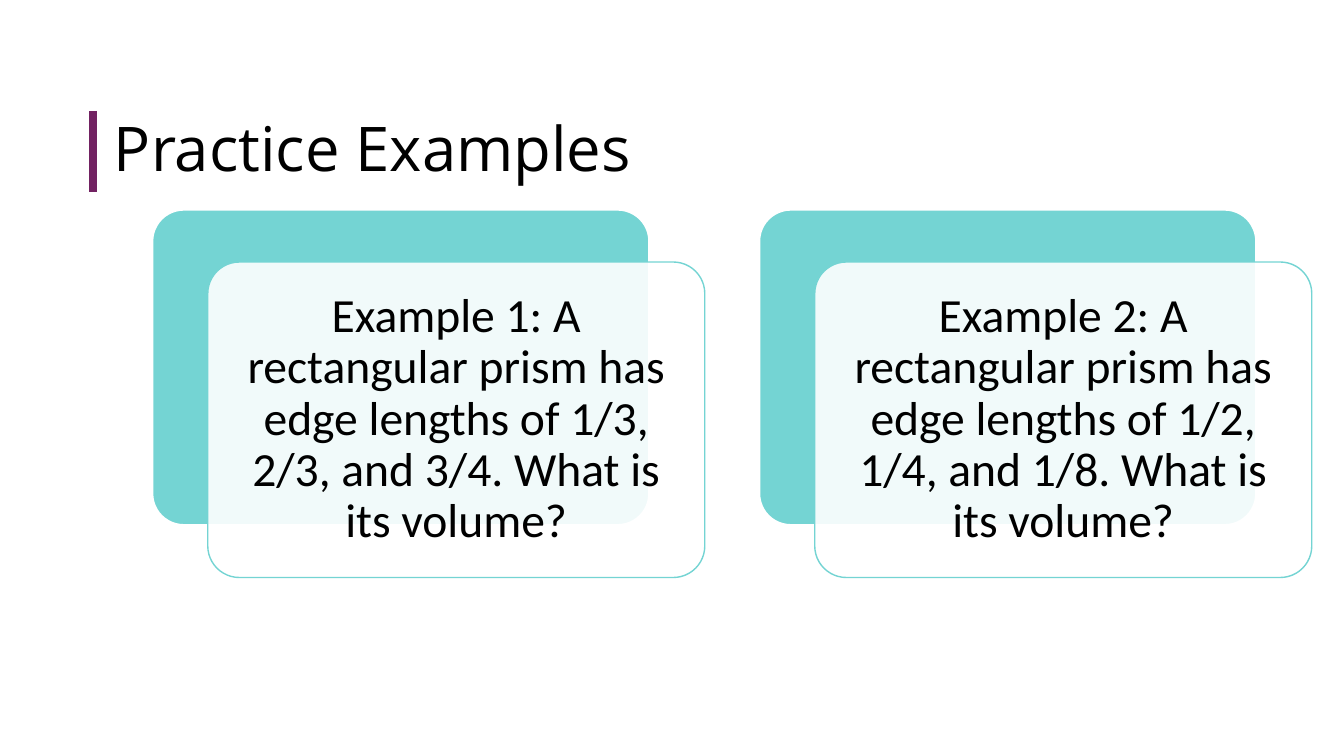
"""Build the Practice Examples slide with two layered example cards."""
from dataclasses import dataclass

from lxml.etree import SubElement
from pptx import Presentation
from pptx.dml.color import RGBColor
from pptx.enum.shapes import MSO_CONNECTOR as Connector, MSO_SHAPE as Preset
from pptx.enum.text import MSO_ANCHOR as Anchor, PP_ALIGN as Align
from pptx.oxml.ns import qn
from pptx.shapes.autoshape import Shape
from pptx.slide import Slide
from pptx.text.text import TextFrame
from pptx.util import Inches, Length, Pt

SLIDE_WIDTH, SLIDE_HEIGHT = Inches(13.33), Inches(7.5)


@dataclass(frozen=True)
class Theme:
    """Colours, fonts and type sizes of the slide."""
    ink: RGBColor = RGBColor.from_string("000000")
    paper: RGBColor = RGBColor.from_string("FFFFFF")
    teal: RGBColor = RGBColor.from_string("74D4D3")
    plum: RGBColor = RGBColor.from_string("722262")
    title_font: str = "Open Sans"
    body_font: str = "Calibri"
    title_size: Length = Pt(44)
    body_size: Length = Pt(34)
    line_spacing: float = 0.9


@dataclass(frozen=True)
class Area:
    """A rectangle in percent of the slide's width and height."""
    left: float
    top: float
    width: float
    height: float

    def shifted(self, across: float, down: float = 0) -> "Area":
        """Return the same rectangle moved by the given percentages."""
        return Area(self.left + across, self.top + down, self.width, self.height)

    def box(self) -> tuple[Length, Length, Length, Length]:
        """Return left, top, width and height as slide lengths."""
        return (across_slide(self.left), down_slide(self.top),
                across_slide(self.width), down_slide(self.height))


@dataclass(frozen=True)
class Example:
    """One practice question."""
    number: int
    edges: str

    def question(self) -> str:
        """Return the full wording of the question."""
        return (f"Example {self.number}: A rectangular prism has edge lengths "
                f"of {self.edges}. What is its volume?")


THEME = Theme()
TITLE_AREA = Area(7.88, 14.67, 86.27, 10.67)
ACCENT_LEFT = 6.9
FIRST_CARD = Area(11.33, 27.73, 36.98, 41.73)
CARD_PITCH = 45.16
FRONT_SHIFT = (4.13, 6.93)
EXAMPLES = (Example(1, "1/3, 2/3, and 3/4"), Example(2, "1/2, 1/4, and 1/8"))


def across_slide(percent: float) -> Length:
    """Convert a percentage of the slide width."""
    return Length(round(SLIDE_WIDTH * percent / 100))


def down_slide(percent: float) -> Length:
    """Convert a percentage of the slide height."""
    return Length(round(SLIDE_HEIGHT * percent / 100))


def write(frame: TextFrame, wording: str, font_name: str, size: Length,
          align: Align, margin: Length) -> None:
    """Fill a text frame with one formatted paragraph."""
    frame.text = wording
    frame.word_wrap = True
    frame.vertical_anchor = Anchor.MIDDLE
    frame.margin_left = frame.margin_right = margin
    frame.margin_top = frame.margin_bottom = margin
    paragraph = frame.paragraphs[0]
    paragraph.alignment = align
    paragraph.line_spacing = THEME.line_spacing
    font = paragraph.runs[0].font
    font.name, font.size = font_name, size
    font.color.rgb = THEME.ink


def draw_heading(slide: Slide, wording: str) -> None:
    """Draw the accent bar and the title beside it."""
    left = across_slide(ACCENT_LEFT)
    top = down_slide(TITLE_AREA.top)
    bottom = down_slide(TITLE_AREA.top + TITLE_AREA.height)
    accent = slide.shapes.add_connector(Connector.STRAIGHT, left, top, left, bottom)
    accent.line.color.rgb = THEME.plum
    accent.line.width = Pt(6)
    SubElement(accent.element.spPr, qn("a:effectLst"))
    title = slide.shapes.add_textbox(*TITLE_AREA.box())
    write(title.text_frame, wording, THEME.title_font, THEME.title_size,
          Align.LEFT, Inches(0.08))


def draw_panel(slide: Slide, area: Area, fill: RGBColor, outline: RGBColor,
               outline_width: Length) -> Shape:
    """Draw one rounded panel."""
    panel = slide.shapes.add_shape(Preset.ROUNDED_RECTANGLE, *area.box())
    panel.adjustments[0] = 0.1
    panel.shadow.inherit = False
    panel.fill.solid()
    panel.fill.fore_color.rgb = fill
    panel.line.color.rgb = outline
    panel.line.width = outline_width
    return panel


def draw_card(slide: Slide, area: Area, example: Example) -> None:
    """Draw a teal panel with a translucent question panel over it."""
    draw_panel(slide, area, THEME.teal, THEME.paper, Pt(1.5))
    front = draw_panel(slide, area.shifted(*FRONT_SHIFT), THEME.paper, THEME.teal, Pt(1))
    fill_color = front.element.spPr.find(qn("a:solidFill")).find(qn("a:srgbClr"))
    SubElement(fill_color, qn("a:alpha"), val="90000")
    write(front.text_frame, example.question(), THEME.body_font, THEME.body_size,
          Align.CENTER, Inches(0.14))


def main() -> None:
    """Build and save the presentation."""
    deck = Presentation()
    deck.slide_width, deck.slide_height = SLIDE_WIDTH, SLIDE_HEIGHT
    slide = deck.slides.add_slide(deck.slide_layouts[6])
    draw_heading(slide, "Practice Examples")
    for column, example in enumerate(EXAMPLES):
        draw_card(slide, FIRST_CARD.shifted(column * CARD_PITCH), example)
    deck.save("out.pptx")


if __name__ == "__main__":
    main()
